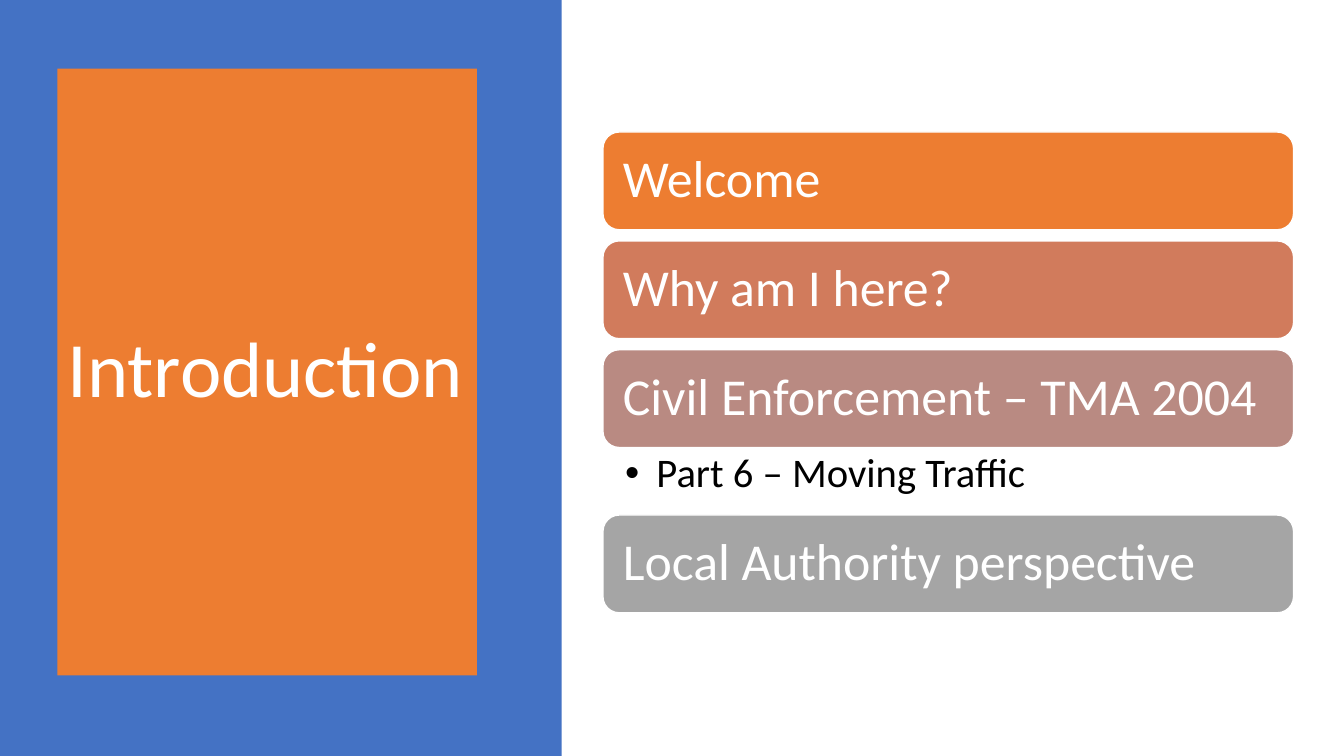
from dataclasses import dataclass

from pptx import Presentation
from pptx.dml.color import RGBColor
from pptx.enum.shapes import MSO_SHAPE
from pptx.enum.text import MSO_ANCHOR, MSO_AUTO_SIZE, PP_ALIGN
from pptx.shapes.autoshape import Shape
from pptx.slide import Slide
from pptx.util import Emu, Pt

EMU_PER_PX = 9144
FONT = "Calibri"
WHITE, BLACK = "FFFFFF", "000000"
BLUE, ORANGE = "4472C4", "ED7D31"

AGENDA_LEFT, AGENDA_TOP, AGENDA_WIDTH = 598, 131, 685
TOPIC_HEIGHT, TOPIC_GAP, DETAIL_HEIGHT = 97, 11, 67
BULLET_INDENT = 31


@dataclass(frozen=True)
class Box:
    left: int
    top: int
    width: int
    height: int


@dataclass(frozen=True)
class Topic:
    label: str
    fill: str
    detail: str = ""


TOPICS = [
    Topic("Welcome", ORANGE),
    Topic("Why am I here?", "D17B5C"),
    Topic("Civil Enforcement – TMA 2004", "B98A82", "Part 6 – Moving Traffic"),
    Topic("Local Authority perspective", "A5A5A5"),
]


def px(length: int) -> Emu:
    return Emu(length * EMU_PER_PX)


def color(value: str) -> RGBColor:
    return RGBColor.from_string(value)


def fill_solid(shape: Shape, value: str) -> None:
    shape.fill.solid()
    shape.fill.fore_color.rgb = color(value)


def place(shape: Shape, box: Box) -> None:
    shape.left, shape.top = px(box.left), px(box.top)
    shape.width, shape.height = px(box.width), px(box.height)


def add_block(slide: Slide, kind: MSO_SHAPE, box: Box, fill: str) -> Shape:
    block = slide.shapes.add_shape(
        kind, px(box.left), px(box.top), px(box.width), px(box.height)
    )
    block.shadow.inherit = False
    fill_solid(block, fill)
    block.line.fill.background()
    return block


def write(shape: Shape, text: str, size: int, ink: str, anchor: MSO_ANCHOR,
          insets: tuple[int, int, int, int]) -> None:
    frame = shape.text_frame
    frame.text = text
    frame.word_wrap = True
    frame.auto_size = MSO_AUTO_SIZE.NONE
    frame.vertical_anchor = anchor
    frame.margin_left, frame.margin_top, frame.margin_right, frame.margin_bottom = map(px, insets)
    paragraph = frame.paragraphs[0]
    paragraph.alignment = PP_ALIGN.LEFT
    paragraph.line_spacing = 0.9
    paragraph.space_before = Pt(0)
    font = paragraph.runs[0].font
    font.name, font.size = FONT, Pt(size)
    font.color.rgb = color(ink)


def draw_heading(slide: Slide) -> None:
    heading = slide.shapes.title
    place(heading, Box(57, 68, 416, 602))
    fill_solid(heading, ORANGE)
    write(heading, "Introduction", 56, WHITE, MSO_ANCHOR.MIDDLE, (10, 5, 10, 5))
    side_panel = add_block(slide, MSO_SHAPE.RECTANGLE, Box(0, 0, 557, 750), BLUE)
    heading.element.addprevious(side_panel.element)


def draw_topic(slide: Slide, topic: Topic, top: int) -> None:
    box = Box(AGENDA_LEFT, top, AGENDA_WIDTH, TOPIC_HEIGHT)
    card = add_block(slide, MSO_SHAPE.ROUNDED_RECTANGLE, box, topic.fill)
    card.line.color.rgb = color(WHITE)
    card.line.width = Pt(1)
    write(card, topic.label, 37, WHITE, MSO_ANCHOR.MIDDLE, (15, 15, 15, 15))


def draw_detail(slide: Slide, text: str, top: int) -> None:
    detail = slide.placeholders[1]
    place(detail, Box(AGENDA_LEFT, top, AGENDA_WIDTH, DETAIL_HEIGHT))
    write(detail, text, 29, BLACK, MSO_ANCHOR.TOP, (22, 5, 29, 5))
    properties = detail.text_frame.paragraphs[0]._p.get_or_add_pPr()
    properties.set("marL", str(px(BULLET_INDENT)))
    properties.set("indent", str(-px(BULLET_INDENT)))


def draw_agenda(slide: Slide) -> None:
    top = AGENDA_TOP
    for topic in TOPICS:
        draw_topic(slide, topic, top)
        top += TOPIC_HEIGHT
        if topic.detail:
            draw_detail(slide, topic.detail, top)
            top += DETAIL_HEIGHT
        else:
            top += TOPIC_GAP


def main() -> None:
    presentation = Presentation()
    presentation.slide_width, presentation.slide_height = px(1333), px(750)
    slide = presentation.slides.add_slide(presentation.slide_layouts[1])
    draw_heading(slide)
    draw_agenda(slide)
    presentation.save("out.pptx")


if __name__ == "__main__":
    main()
